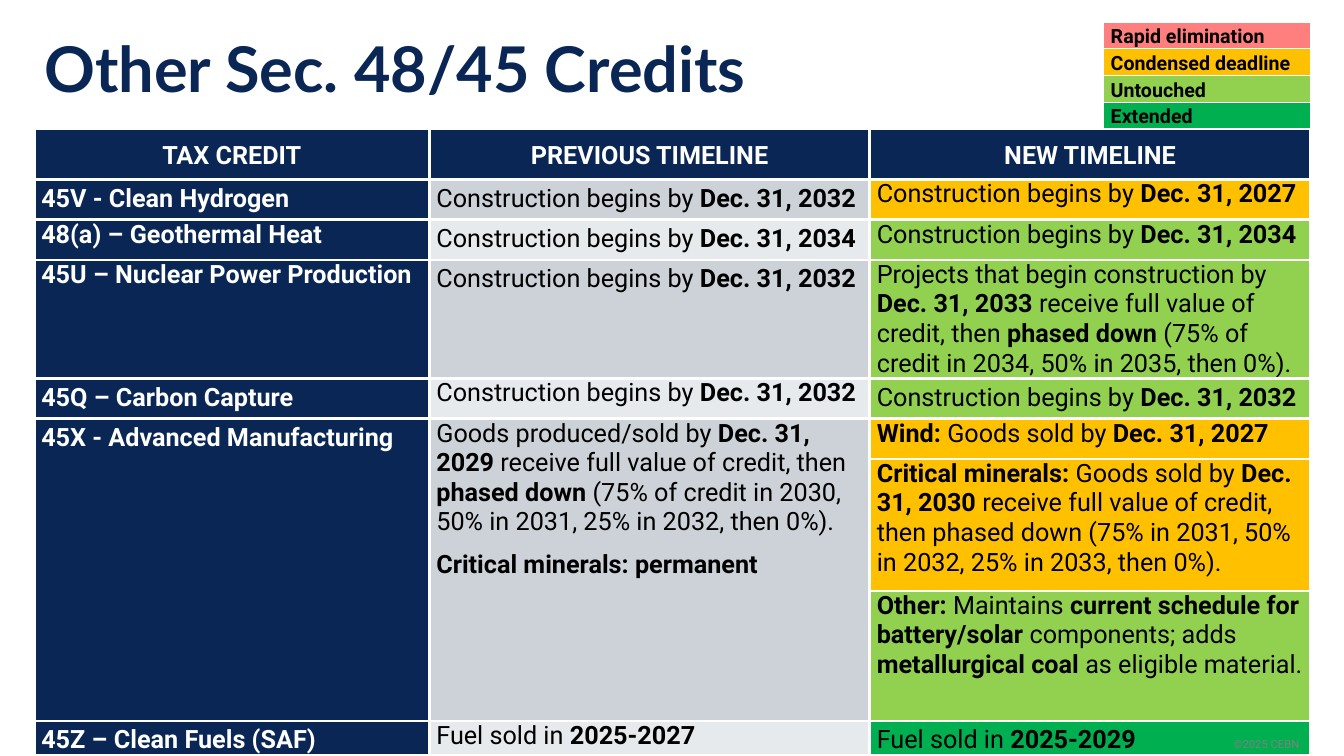
import collections

import lxml.etree
import pptx
import pptx.dml.color
import pptx.enum.text
import pptx.oxml.ns
import pptx.util

Pt = pptx.util.Pt
qn = pptx.oxml.ns.qn
ALIGN = pptx.enum.text.PP_ALIGN
ANCHOR = pptx.enum.text.MSO_ANCHOR
Entry = collections.namedtuple("Entry", "text fill loose", defaults=[False])

NAVY, WHITE, BLACK, GREY = "092655", "FFFFFF", "000000", "808080"
DARK_BAND, LIGHT_BAND = "CCD2D8", "E7EAED"
RED, AMBER, LIME, GREEN = "FF0000", "FFC000", "92D050", "00B050"

LEFT, TOP = 24.48, 15.84
COLUMNS = [282.24, 314.64, 314.64]
ROW_HEIGHTS = [36, 28.8, 28.8, 84.24, 28.8, 28.8, 94.3, 92.9, 24.5]
MERGED_ROWS = (5, 7)

CREDITS = [
    [Entry("**TAX CREDIT**", NAVY, True),
     Entry("**PREVIOUS TIMELINE**", NAVY, True),
     Entry("**NEW TIMELINE**", NAVY, True)],
    [Entry("**45V - Clean Hydrogen**", NAVY, True),
     Entry("Construction begins by **Dec. 31, 2032**", DARK_BAND, True),
     Entry("Construction begins by **Dec. 31, 2027**", AMBER)],
    [Entry("**48(a) – Geothermal Heat**", NAVY),
     Entry("Construction begins by **Dec. 31, 2034**", LIGHT_BAND, True),
     Entry("Construction begins by **Dec. 31, 2034**", LIME)],
    [Entry("**45U – Nuclear Power Production**", NAVY),
     Entry("Construction begins by **Dec. 31, 2032**", DARK_BAND, True),
     Entry("Projects that begin construction by **Dec. 31, 2033 **receive full value of credit, "
           "then **phased down **(75% of credit in 2034, 50% in 2035, then 0%).", LIME)],
    [Entry("**45Q – Carbon Capture**", NAVY, True),
     Entry("Construction begins by **Dec. 31, 2032**", LIGHT_BAND),
     Entry("Construction begins by **Dec. 31, 2032**", LIME, True)],
    [Entry("**45X - Advanced Manufacturing**", NAVY, True),
     Entry("Goods produced/sold by **Dec. 31, 2029** receive full value of credit, then "
           "**phased down **(75% of credit in 2030, 50% in 2031, 25% in 2032, then 0%).\n"
           "**Critical minerals: permanent**", DARK_BAND),
     Entry("**Wind: **Goods sold by **Dec. 31, 2027**", AMBER)],
    [Entry("", NAVY), Entry("", DARK_BAND),
     Entry("**Critical minerals: **Goods sold by **Dec. 31, 2030 **receive full value of credit, "
           "then phased down (75% in 2031, 50% in 2032, 25% in 2033, then 0%).", AMBER)],
    [Entry("", NAVY), Entry("", DARK_BAND),
     Entry("**Other: **Maintains **current schedule for battery/solar **components; adds"
           "** metallurgical coal **as eligible material.", LIME)],
    [Entry("**45Z – Clean Fuels (SAF)**", NAVY, True),
     Entry("Fuel sold in **2025-2027**", LIGHT_BAND),
     Entry("Fuel sold in **2025-2029**", GREEN, True)],
]

LEGEND = [
    [Entry("**Rapid elimination**", RED, True)],
    [Entry("**Condensed deadline**", AMBER, True)],
    [Entry("**Untouched**", LIME, True)],
    [Entry("**Extended**", GREEN, True)],
]


def color(value):
    return pptx.dml.color.RGBColor.from_string(value)


def add_span(para, text, size, ink, bold=False, face="Roboto"):
    span = para.add_run()
    span.text = text
    span.font.name = face
    span.font.size = Pt(size)
    span.font.bold = bold
    span.font.color.rgb = color(ink)


def add_border(cell, width):
    properties = cell._tc.get_or_add_tcPr()
    for side in ("a:lnL", "a:lnR", "a:lnT", "a:lnB"):
        line = lxml.etree.SubElement(properties, qn(side), w=str(int(Pt(width))))
        fill = lxml.etree.SubElement(line, qn("a:solidFill"))
        lxml.etree.SubElement(fill, qn("a:srgbClr"), val=WHITE)


def set_opacity(cell, percent):
    fill = cell._tc.tcPr.find(qn("a:solidFill"))
    tint = fill.find(qn("a:srgbClr"))
    lxml.etree.SubElement(tint, qn("a:alpha"), val=str(percent * 1000))


def fill_cell(cell, entry, size, ink, border):
    add_border(cell, border)
    cell.fill.solid()
    cell.fill.fore_color.rgb = color(entry.fill)
    cell.margin_left = cell.margin_right = Pt(5)
    cell.margin_top = cell.margin_bottom = 0
    if not entry.text:
        return
    for index, line in enumerate(entry.text.split("\n")):
        para = cell.text_frame.add_paragraph() if index else cell.text_frame.paragraphs[0]
        if index:
            para.space_before = Pt(9.4)
        if entry.loose:
            para.line_spacing = 1.15
            para.space_after = Pt(8)
        for part, text in enumerate(line.split("**")):
            if text:
                add_span(para, text, size, ink, bold=part % 2 == 1)


def add_grid(page, rows, left, top, widths, heights, size, border):
    frame = page.shapes.add_table(len(rows), len(widths), Pt(left), Pt(top),
                                  Pt(sum(widths)), Pt(sum(heights)))
    table = frame.table
    table.first_row = table.horz_banding = False
    for column, width in zip(table.columns, widths):
        column.width = Pt(width)
    for row, height in zip(table.rows, heights):
        row.height = Pt(height)
    for row, entries in zip(table.rows, rows):
        for cell, entry in zip(row.cells, entries):
            ink = WHITE if entry.fill == NAVY else BLACK
            fill_cell(cell, entry, size, ink, border)
    return table


def add_credits(page):
    table = add_grid(page, CREDITS, LEFT, 92.16, COLUMNS, ROW_HEIGHTS, 18, 2.25)
    for cell in table.rows[0].cells:
        cell.vertical_anchor = ANCHOR.MIDDLE
        cell.text_frame.paragraphs[0].alignment = ALIGN.CENTER
    first, last = MERGED_ROWS
    for column in (0, 1):
        table.cell(first, column).merge(table.cell(last, column))


def add_legend(page):
    table = add_grid(page, LEGEND, 788.4, TOP, [147.6], [19] * len(LEGEND), 14, 1)
    set_opacity(table.cell(0, 0), 50)


def set_title(page, text):
    title = page.shapes.title
    title.left, title.top, title.width, title.height = Pt(LEFT), Pt(TOP), Pt(822.24), Pt(64.8)
    title.text_frame.vertical_anchor = ANCHOR.MIDDLE
    para = title.text_frame.paragraphs[0]
    para.alignment = ALIGN.LEFT
    add_span(para, text, 45, NAVY, bold=True, face="Lato")


def add_copyright(page, text):
    box = page.shapes.add_textbox(Pt(845.28), Pt(523.44), Pt(90), Pt(17.28))
    box.text_frame.word_wrap = True
    para = box.text_frame.paragraphs[0]
    para.alignment = ALIGN.RIGHT
    add_span(para, text, 8, GREY)


def main():
    deck = pptx.Presentation()
    deck.slide_width, deck.slide_height = Pt(960), Pt(540)
    page = deck.slides.add_slide(deck.slide_layouts.get_by_name("Title Only"))
    add_credits(page)
    set_title(page, "Other Sec. 48/45 Credits")
    add_legend(page)
    add_copyright(page, "©2025 CEBN")
    deck.save("out.pptx")


if __name__ == "__main__":
    main()
